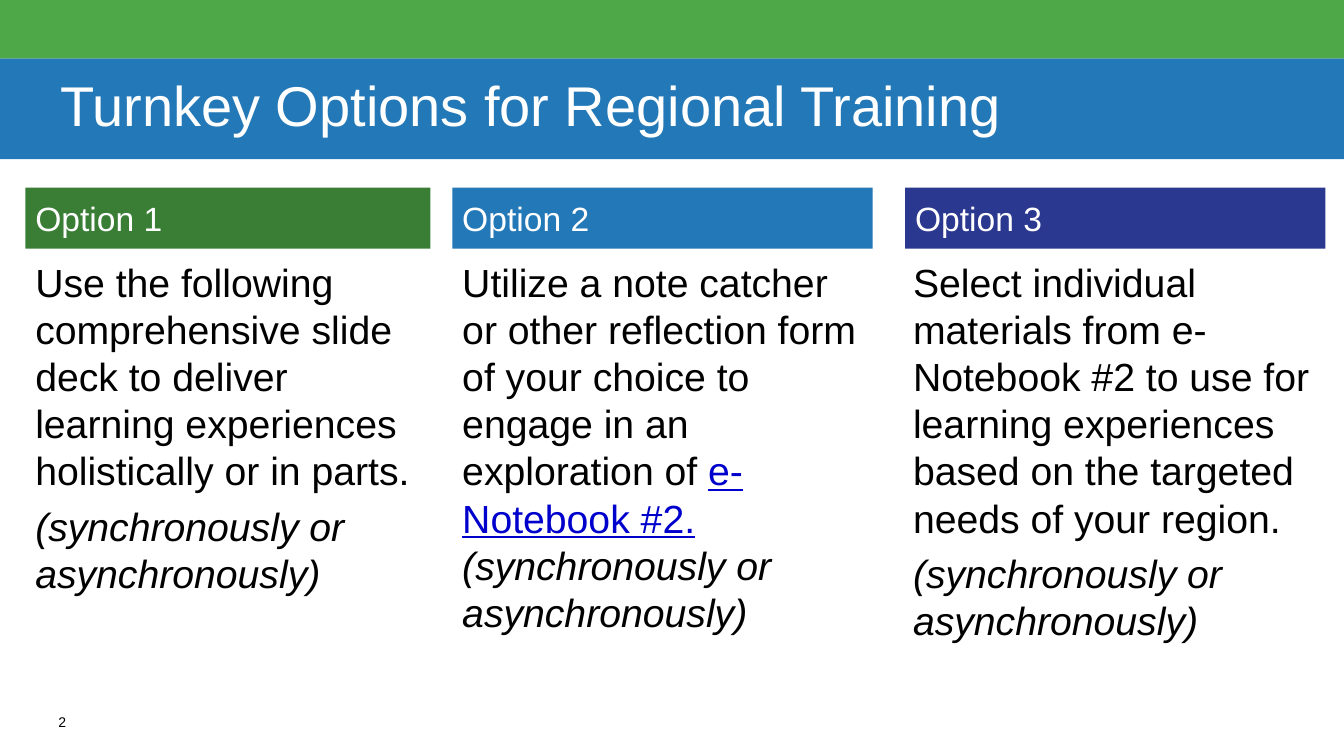
"""Build the slide on turnkey options for regional training."""
from pptx import Presentation
from pptx.dml.color import RGBColor
from pptx.enum import shapes, text
from pptx.util import Cm, Pt

WHITE = RGBColor(0xFF, 0xFF, 0xFF)
BLACK = RGBColor(0x00, 0x00, 0x00)
LIGHT_GREEN = RGBColor(0x4E, 0xA8, 0x48)
GREEN = RGBColor(0x3A, 0x7E, 0x36)
BLUE = RGBColor(0x23, 0x79, 0xB8)
INDIGO = RGBColor(0x2B, 0x38, 0x90)
LINK_BLUE = RGBColor(0x00, 0x00, 0xCC)

SLIDE_WIDTH = Cm(33.87)
BAND_HEIGHT = Cm(1.47)
HEADING_TOP, HEADING_HEIGHT = Cm(4.73), Cm(1.54)
INSET = Cm(0.25)
MODES = ("(synchronously or asynchronously)", "italic")

OPTIONS = [
    ("Option 1", GREEN, 0.64, 10.21, 0.64, 9.98, 9.12, [
        [("Use the following comprehensive slide deck to deliver learning "
          "experiences holistically or in parts.", "plain")],
        [MODES]]),
    ("Option 2", BLUE, 11.4, 10.59, 11.4, 10.49, 10.08, [
        [("Utilize a note catcher or other reflection form of your choice to "
          "engage in an exploration of ", "plain"),
         ("e-Notebook #2.", "link"), (" ", "plain"), MODES]]),
    ("Option 3", INDIGO, 22.81, 10.59, 22.76, 10.49, 11.51, [
        [("Select individual materials from e-Notebook #2 to use for learning "
          "experiences based on the targeted needs of your region.", "plain")],
        [MODES]]),
]


def set_frame(frame, side, edge, anchor):
    frame.word_wrap = True
    frame.auto_size = text.MSO_AUTO_SIZE.NONE
    frame.vertical_anchor = anchor
    frame.margin_left = frame.margin_right = side
    frame.margin_top = frame.margin_bottom = edge


def set_font(font, size, color):
    font.name = "Arial"
    font.size = Pt(size)
    font.color.rgb = color


deck = Presentation()
deck.slide_width, deck.slide_height = SLIDE_WIDTH, Cm(19.05)
slide = deck.slides.add_slide(deck.slide_layouts[5])

band = slide.shapes.add_shape(shapes.MSO_SHAPE.RECTANGLE, 0, 0, SLIDE_WIDTH, BAND_HEIGHT)
band.shadow.inherit = False
band.fill.solid()
band.fill.fore_color.rgb = LIGHT_GREEN
band.line.fill.background()

title = slide.shapes.title
title.left, title.top = 0, BAND_HEIGHT
title.width, title.height = SLIDE_WIDTH, Cm(2.54)
title.fill.solid()
title.fill.fore_color.rgb = BLUE
title.text_frame.text = "Turnkey Options for Regional Training"
set_frame(title.text_frame, Cm(1.52), 0, text.MSO_ANCHOR.MIDDLE)
headline = title.text_frame.paragraphs[0]
headline.alignment = text.PP_ALIGN.LEFT
headline.line_spacing = 0.9
set_font(headline.runs[0].font, 40, WHITE)

page_number = slide.shapes.add_textbox(Cm(1.47), Cm(17.98), Cm(1.07), Cm(0.64))
page_number.text_frame.text = "2"
set_frame(page_number.text_frame, 0, 0, text.MSO_ANCHOR.TOP)
set_font(page_number.text_frame.paragraphs[0].runs[0].font, 10, BLACK)

for name, color, head_left, head_width, left, width, height, paragraphs in OPTIONS:
    heading = slide.shapes.add_shape(
        shapes.MSO_SHAPE.RECTANGLE, Cm(head_left), HEADING_TOP, Cm(head_width), HEADING_HEIGHT)
    heading.shadow.inherit = False
    heading.fill.solid()
    heading.fill.fore_color.rgb = color
    heading.line.fill.background()
    heading.text_frame.text = name
    set_frame(heading.text_frame, INSET, INSET, text.MSO_ANCHOR.MIDDLE)
    label = heading.text_frame.paragraphs[0]
    label.alignment = text.PP_ALIGN.LEFT
    set_font(label.runs[0].font, 24, WHITE)

    description = slide.shapes.add_textbox(
        Cm(left), HEADING_TOP + HEADING_HEIGHT, Cm(width), Cm(height))
    frame = description.text_frame
    set_frame(frame, INSET, INSET, text.MSO_ANCHOR.TOP)
    for index, parts in enumerate(paragraphs):
        paragraph = frame.add_paragraph() if index else frame.paragraphs[0]
        paragraph.line_spacing = Pt(33.6)
        if index:
            paragraph.space_before = Pt(6)
        for wording, style in parts:
            run = paragraph.add_run()
            run.text = wording
            set_font(run.font, 28, LINK_BLUE if style == "link" else BLACK)
            run.font.italic = style == "italic"
            run.font.underline = style == "link"

deck.save("out.pptx")
